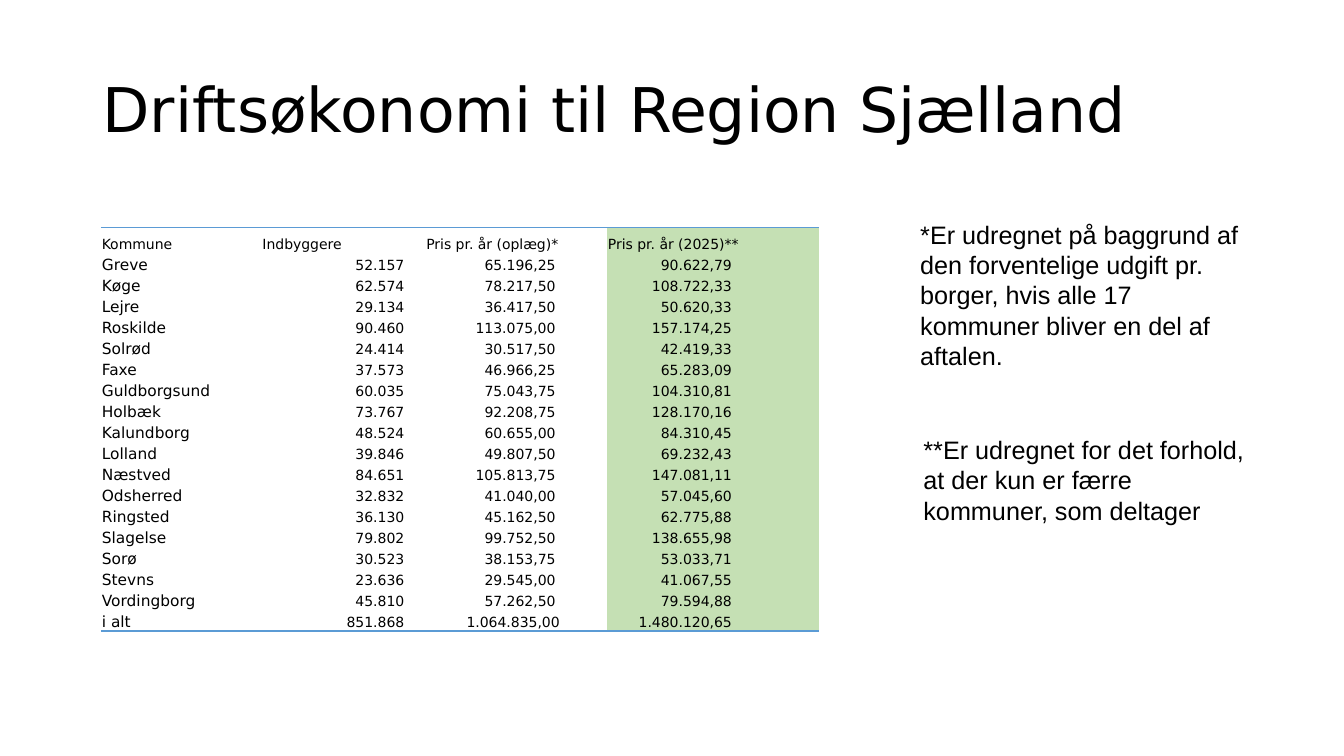
from lxml import etree
from pptx import Presentation
from pptx.dml.color import RGBColor
from pptx.enum.text import MSO_ANCHOR, MSO_AUTO_SIZE, PP_ALIGN
from pptx.oxml.ns import qn
from pptx.util import Pt

EMU_PER_PX = 9525
BLACK = RGBColor(0x00, 0x00, 0x00)
BLUE = RGBColor(0x5B, 0x9B, 0xD5)
GREEN = RGBColor(0xC5, 0xE0, 0xB4)
LEFT, RIGHT = PP_ALIGN.LEFT, PP_ALIGN.RIGHT
MIDDLE, BOTTOM = MSO_ANCHOR.MIDDLE, MSO_ANCHOR.BOTTOM
NO_AUTOFIT, GROW = MSO_AUTO_SIZE.NONE, MSO_AUTO_SIZE.SHAPE_TO_FIT_TEXT
HEAD_FONT, NOTE_FONT = "DejaVu Sans", "Arial"
PLAIN_TABLE = "{2D5ABB26-0587-4C30-8999-92F81FD0307C}"

HEADER = ["Kommune", "Indbyggere", "Pris pr. år (oplæg)*", "Pris pr. år (2025)**"]
KOMMUNER = [
    ["Greve", "52.157", "65.196,25", "90.622,79"],
    ["Køge", "62.574", "78.217,50", "108.722,33"],
    ["Lejre", "29.134", "36.417,50", "50.620,33"],
    ["Roskilde", "90.460", "113.075,00", "157.174,25"],
    ["Solrød", "24.414", "30.517,50", "42.419,33"],
    ["Faxe", "37.573", "46.966,25", "65.283,09"],
    ["Guldborgsund", "60.035", "75.043,75", "104.310,81"],
    ["Holbæk", "73.767", "92.208,75", "128.170,16"],
    ["Kalundborg", "48.524", "60.655,00", "84.310,45"],
    ["Lolland", "39.846", "49.807,50", "69.232,43"],
    ["Næstved", "84.651", "105.813,75", "147.081,11"],
    ["Odsherred", "32.832", "41.040,00", "57.045,60"],
    ["Ringsted", "36.130", "45.162,50", "62.775,88"],
    ["Slagelse", "79.802", "99.752,50", "138.655,98"],
    ["Sorø", "30.523", "38.153,75", "53.033,71"],
    ["Stevns", "23.636", "29.545,00", "41.067,55"],
    ["Vordingborg", "45.810", "57.262,50", "79.594,88"],
]
TOTAL = ["i alt", "851.868", "1.064.835,00", "1.480.120,65"]
COL_WIDTHS = [153, 156, 173, 202]
NUMBER_MARGINS = [1, 20, 49, 83]
TOTAL_MARGINS = [1, 20, 45, 83]
HEADER_HEIGHT, ROW_HEIGHT = 24, 20


def px(n):
    return n * EMU_PER_PX


def write(tf, text, size=18, font=NOTE_FONT, color=BLACK, align=LEFT, spacing=None):
    p = tf.paragraphs[0]
    p.alignment = align
    p.line_spacing = spacing
    r = p.add_run()
    r.text = text
    r.font.size, r.font.name = Pt(size), font
    r.font.color.rgb = color


def add_border(cell, side, color, width=1):
    ln = etree.Element(qn("a:" + side), w=str(Pt(width)))
    fill = etree.SubElement(ln, qn("a:solidFill"))
    etree.SubElement(fill, qn("a:srgbClr"), val=str(color))
    cell._tc.get_or_add_tcPr().insert(0, ln)


class SlideBuilder:
    def __init__(self, prs):
        self.s = prs.slides.add_slide(prs.slide_layouts[5])

    def title(self, text, x, y, w, h):
        sp = self.s.shapes.title
        sp.left, sp.top, sp.width, sp.height = map(px, (x, y, w, h))
        tf = sp.text_frame
        tf.auto_size, tf.vertical_anchor = NO_AUTOFIT, MIDDLE
        write(tf, text, size=44, font=HEAD_FONT, spacing=0.9)

    def note(self, text, x, y, w, h):
        tf = self.s.shapes.add_textbox(*map(px, (x, y, w, h))).text_frame
        tf.word_wrap, tf.auto_size = True, GROW
        write(tf, text)

    def cell(self, cell, text, size, align, right, green):
        cell.margin_left = cell.margin_top = px(1)
        cell.margin_right, cell.margin_bottom = px(right), 0
        cell.vertical_anchor = BOTTOM
        if green:
            cell.fill.solid()
            cell.fill.fore_color.rgb = GREEN
        else:
            cell.fill.background()
        write(cell.text_frame, text, size=size, font=HEAD_FONT, align=align)

    def table(self, rows, x, y):
        last = len(rows) - 1
        height = HEADER_HEIGHT + last * ROW_HEIGHT
        sp = self.s.shapes.add_table(len(rows), len(COL_WIDTHS), px(x), px(y),
                                     px(sum(COL_WIDTHS)), px(height))
        table = sp.table
        table.first_row = table.horz_banding = False
        table._tbl.tblPr.find(qn("a:tableStyleId")).text = PLAIN_TABLE
        for col, width in zip(table.columns, COL_WIDTHS):
            col.width = px(width)
        for i, values in enumerate(rows):
            table.rows[i].height = px(ROW_HEIGHT if i else HEADER_HEIGHT)
            margins = TOTAL_MARGINS if i == last else NUMBER_MARGINS
            for j, text in enumerate(values):
                cell = table.cell(i, j)
                is_number = i > 0 and j > 0
                self.cell(cell, text,
                          size=11 if i > 0 and j == 0 else 10,
                          align=RIGHT if is_number else LEFT,
                          right=margins[j] if is_number else 1,
                          green=j == 3)
                if i == 0:
                    add_border(cell, "lnT", BLUE)
                elif i == last:
                    add_border(cell, "lnB", BLUE)


def main():
    prs = Presentation()
    prs.slide_width, prs.slide_height = px(1280), px(720)
    slide = SlideBuilder(prs)

    # Cost table
    slide.table([HEADER, *KOMMUNER, TOTAL], 96, 217)

    # Title
    slide.title("Driftsøkonomi til Region Sjælland", 88, 38, 1104, 139)

    # Notes to the price columns
    slide.note("*Er udregnet på baggrund af den forventelige udgift pr. borger, "
               "hvis alle 17 kommuner bliver en del af aftalen.", 867, 204, 335, 156)
    slide.note("**Er udregnet for det forhold, at der kun er færre kommuner, "
               "som deltager", 870, 409, 329, 97)

    prs.save("out.pptx")


if __name__ == "__main__":
    main()
